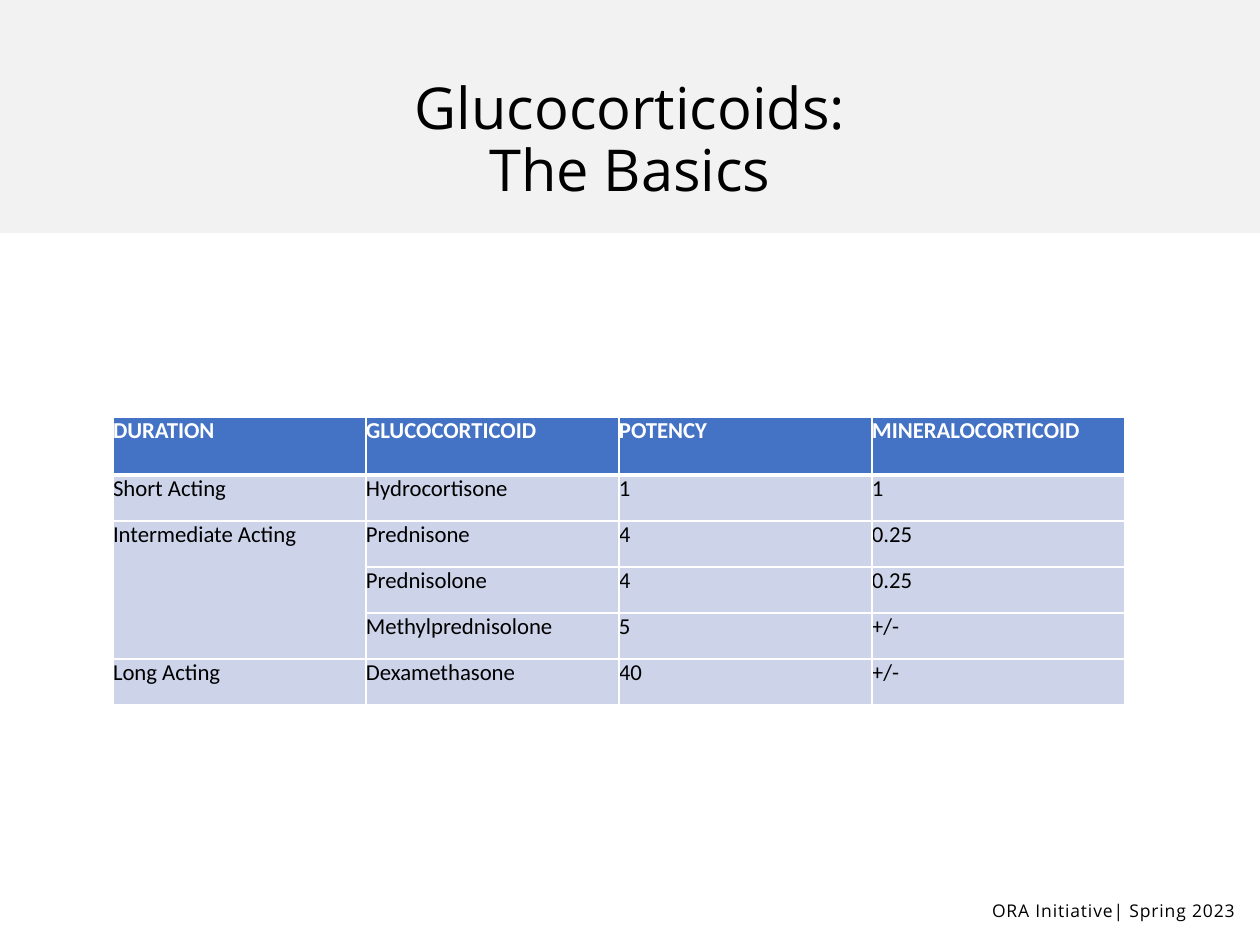
from lxml.etree import SubElement
from pptx import Presentation
from pptx.dml.color import RGBColor
from pptx.enum.shapes import MSO_SHAPE
from pptx.enum.text import MSO_ANCHOR, PP_ALIGN
from pptx.oxml.ns import qn
from pptx.util import Emu, Pt

COLORS = {"black": "000000", "white": "FFFFFF", "header": "4472C4", "body": "CDD4EA"}
RGB = {name: RGBColor.from_string(value) for name, value in COLORS.items()}


def px(*lengths):
    """Turn px lengths, 126 to the inch, into a list of EMU."""
    return [Emu(round(n * 914400 / 126)) for n in lengths]


def style(p, font, size, color, bold=False):
    for r in p.runs:
        r.font.name, r.font.size, r.font.bold = font, Pt(size), bold
        r.font.color.rgb = RGB[color]


prs = Presentation()
prs.slide_width, prs.slide_height = px(1260, 945)
s = prs.slides.add_slide(prs.slide_layouts[5])

# Title band: black at 5 % opacity, behind the title
band = s.shapes.add_shape(MSO_SHAPE.RECTANGLE, *px(0, 0, 1260, 233))
band.shadow.inherit = False
band.fill.solid()
band.fill.fore_color.rgb = RGB["black"]
color = band._element.spPr.find(qn("a:solidFill"))[0]
SubElement(color, qn("a:alpha"), val="5000")
band.line.fill.background()
s.shapes._spTree.insert(2, band._element)

# Title
title = s.shapes.title
title.left, title.top, title.width, title.height = px(87, 50, 1086, 183)
tf = title.text_frame
tf.text = "Glucocorticoids:\nThe Basics"
tf.word_wrap = True
tf.vertical_anchor = MSO_ANCHOR.MIDDLE
tf.margin_left, tf.margin_top, tf.margin_right, tf.margin_bottom = px(6, 6, 6, 6)
for p in tf.paragraphs:
    p.alignment = PP_ALIGN.CENTER
    p.line_spacing = 0.9
    style(p, "Open Sans", 33, "black")

# Table
rows = [
    ("DURATION", "GLUCOCORTICOID", "POTENCY", "MINERALOCORTICOID"),
    ("Short Acting", "Hydrocortisone", "1", "1"),
    ("Intermediate Acting", "Prednisone", "4", "0.25"),
    ("", "Prednisolone", "4", "0.25"),
    ("", "Methylprednisolone", "5", "+/-"),
    ("Long Acting", "Dexamethasone", "40", "+/-"),
]
table = s.shapes.add_table(len(rows), 4, *px(113, 417, 1012, 288)).table
for col in table.columns:
    col.width, = px(253)
for i, row in enumerate(rows):
    header = i == 0
    table.rows[i].height, = px(58 if header else 46)
    for j, text in enumerate(row):
        cell = table.cell(i, j)
        cell.margin_left = cell.margin_top = cell.margin_right = cell.margin_bottom = 0
        cell.text = text
        style(cell.text_frame.paragraphs[0], "Calibri", 13,
              "white" if header else "black", header)
        tcPr = cell._tc.get_or_add_tcPr()
        for side in ("lnL", "lnR", "lnT", "lnB"):
            thick = (i, side) in ((0, "lnB"), (1, "lnT"))
            ln = SubElement(tcPr, qn(f"a:{side}"), w=str(Pt(3 if thick else 1)))
            SubElement(SubElement(ln, qn("a:solidFill")), qn("a:srgbClr"), val=COLORS["white"])
        cell.fill.solid()
        cell.fill.fore_color.rgb = RGB["header" if header else "body"]
table.cell(2, 0).merge(table.cell(4, 0))

# Footer
footer = s.shapes.add_textbox(*px(921, 900, 314, 21))
tf = footer.text_frame
tf.word_wrap = True
tf.margin_left = tf.margin_top = tf.margin_right = tf.margin_bottom = 0
tf.text = "ORA Initiative| Spring 2023"
p = tf.paragraphs[0]
p.alignment = PP_ALIGN.RIGHT
p.line_spacing = Pt(12)
style(p, "Open Sans", 10, "black")
p.runs[0].font._element.set("spc", "50")

prs.save("out.pptx")
